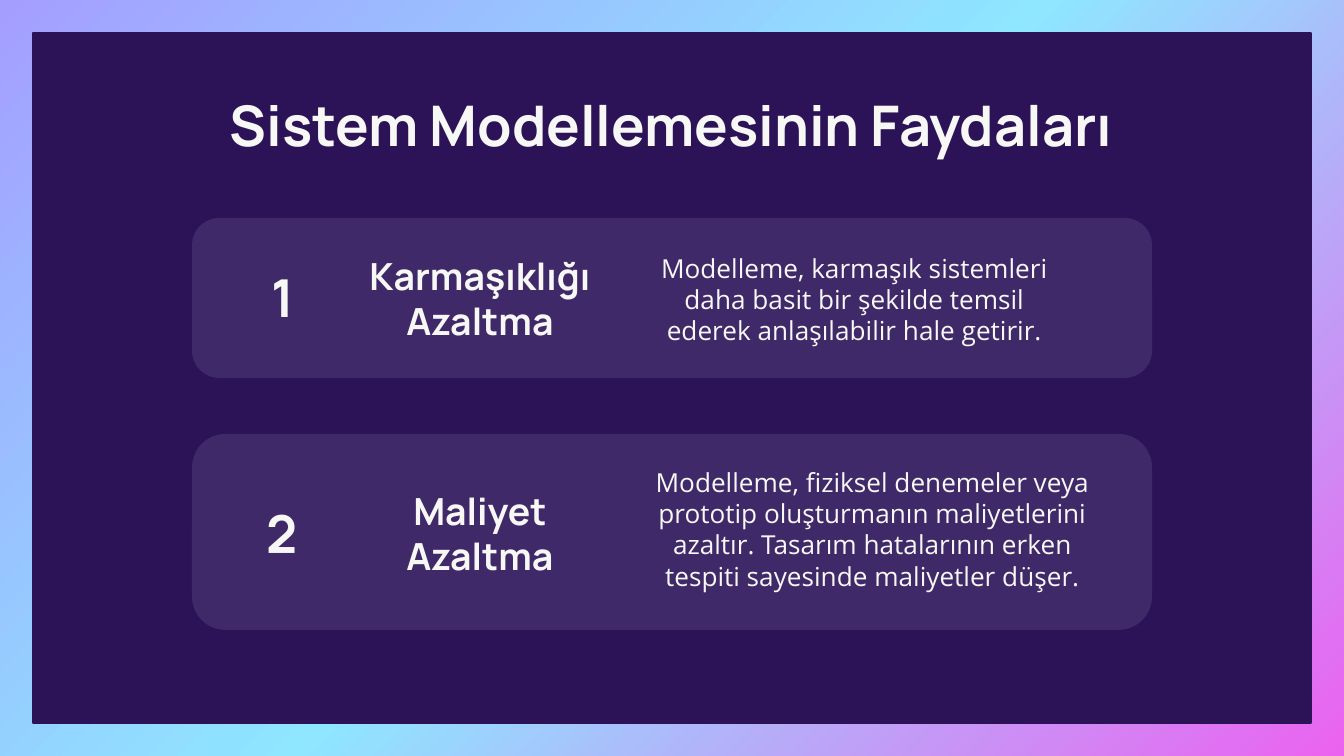
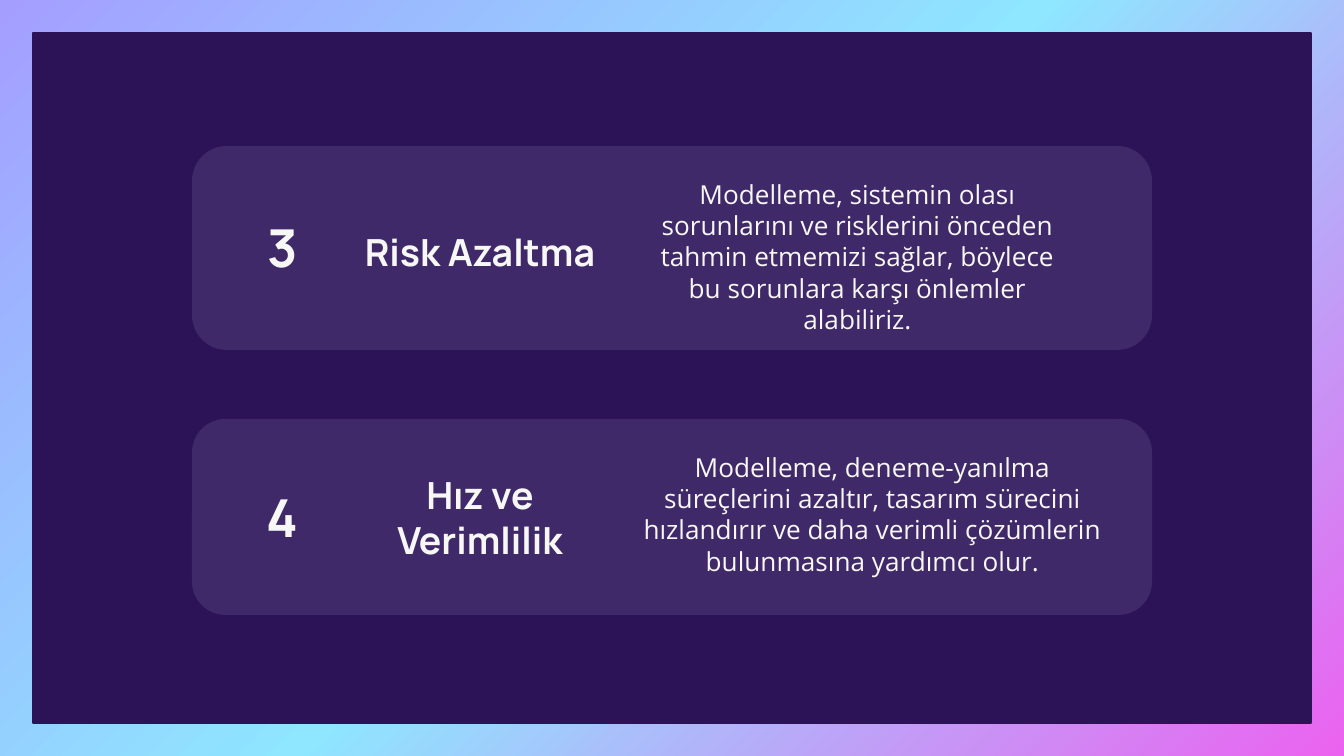
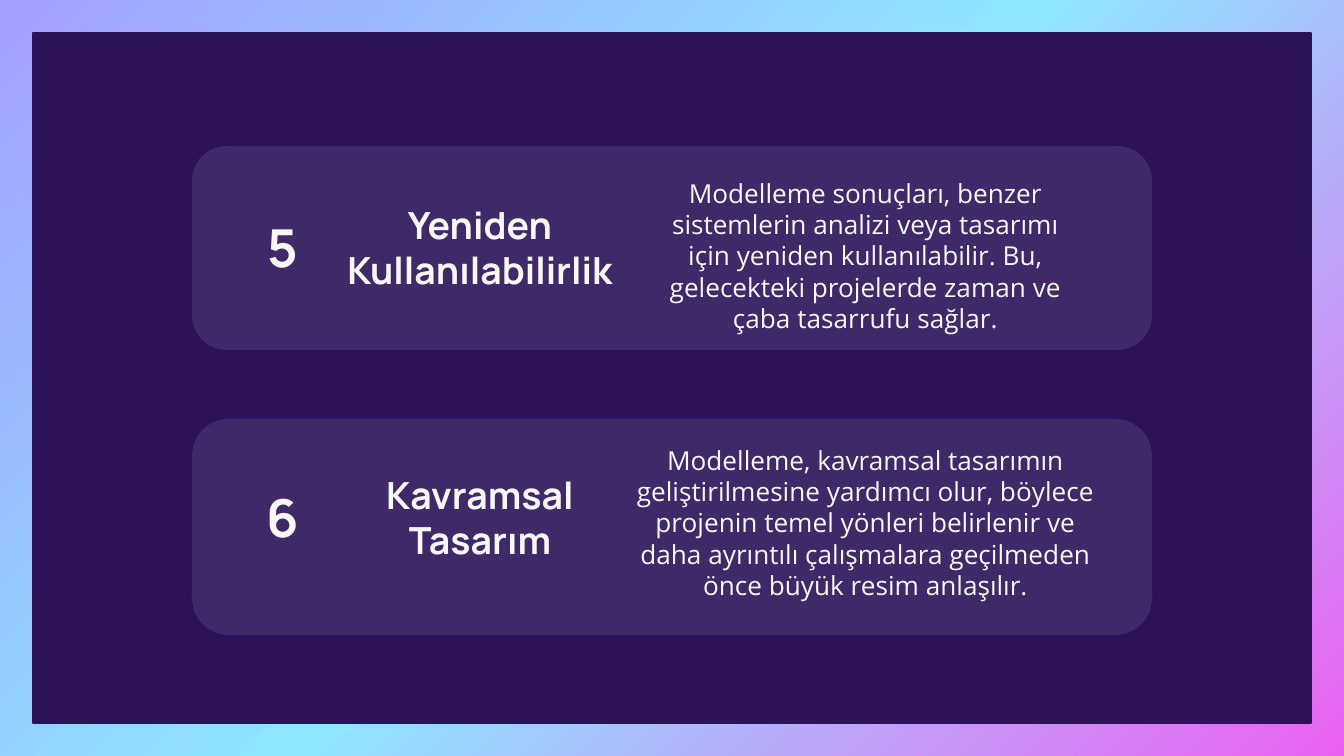
from copy import deepcopy

from pptx import Presentation
from pptx.dml.color import RGBColor
from pptx.enum.shapes import MSO_SHAPE
from pptx.enum.text import MSO_ANCHOR, PP_ALIGN
from pptx.oxml.ns import qn
from pptx.util import Emu, Pt

RECT, ROUND = MSO_SHAPE.RECTANGLE, MSO_SHAPE.ROUNDED_RECTANGLE
TOP, MIDDLE = MSO_ANCHOR.TOP, MSO_ANCHOR.MIDDLE
CENTER = PP_ALIGN.CENTER

SCALE = 914400 / 134.4
WIDE, HIGH = 1344, 756
PAD = 13
GLOW = ["A49EFF", "8EE6FF", "EB62F0"]
NIGHT, PANEL, PALE = "2C1256", "402968", "F7F7F5"
HEAD, BODY = "Manrope", "Open Sans"

CARD_X, CARD_W = 192, 960
NUM_X, NUM_W, NUM_H = 206, 153, 84
NAME_MID, NAME_H = 480, 87

# Each card: top, height, middle line of the number,
# name (text, width, middle line), note (text, left, top, width, height)
SLIDES = [
    ("Sistem Modellemesinin Faydaları", [
        (218, 160, 297, ("Karmaşıklığı Azaltma", 290, 298),
         ("Modelleme, karmaşık sistemleri daha basit bir şekilde temsil "
          "ederek anlaşılabilir hale getirir.", 641, 239, 427, 117)),
        (434, 196, 533, ("Maliyet Azaltma", 227, 533),
         ("Modelleme, fiziksel denemeler veya prototip oluşturmanın "
          "maliyetlerini azaltır. Tasarım hatalarının erken tespiti "
          "sayesinde maliyetler düşer.", 624, 453, 497, 172)),
    ]),
    (None, [
        (146, 204, 247, ("Risk Azaltma", 290, 252),
         ("Modelleme, sistemin olası sorunlarını ve risklerini önceden "
          "tahmin etmemizi sağlar, böylece bu sorunlara karşı önlemler "
          "alabiliriz.", 644, 165, 427, 168)),
        (419, 196, 517, ("Hız ve Verimlilik", 227, 517),
         ("Modelleme, deneme-yanılma süreçlerini azaltır, tasarım sürecini "
          "hızlandırır ve daha verimli çözümlerin bulunmasına yardımcı "
          "olur.", 624, 438, 497, 172)),
    ]),
    (None, [
        (146, 204, 247, ("Yeniden Kullanılabilirlik", 325, 247),
         ("Modelleme sonuçları, benzer sistemlerin analizi veya tasarımı "
          "için yeniden kullanılabilir. Bu, gelecekteki projelerde zaman ve "
          "çaba tasarrufu sağlar.", 652, 164, 427, 168)),
        (419, 216, 517, ("Kavramsal Tasarım", 246, 517),
         ("Modelleme, kavramsal tasarımın geliştirilmesine yardımcı olur, "
          "böylece projenin temel yönleri belirlenir ve daha ayrıntılı "
          "çalışmalara geçilmeden önce büyük resim anlaşılır.",
          617, 431, 497, 172)),
    ]),
]


def px(n):
    return Emu(round(n * SCALE))


def color(code):
    return RGBColor.from_string(code)


def add_glow(master):
    """Set the diagonal three-colour background that all slides inherit."""
    fill = master.background.fill
    fill.gradient()
    fill.gradient_angle = 315
    stops = master.element.find(".//" + qn("a:gsLst"))
    stops.insert(1, deepcopy(stops[0]))
    for i, (stop, code) in enumerate(zip(fill.gradient_stops, GLOW)):
        stop.position = i / (len(GLOW) - 1)
        stop.color.rgb = color(code)


def add_box(slide, kind, x, y, w, h, code):
    box = slide.shapes.add_shape(kind, px(x), px(y), px(w), px(h))
    box.shadow.inherit = False
    box.fill.solid()
    box.fill.fore_color.rgb = color(code)
    return box


def add_text(slide, text, x, y, w, h, size, font=HEAD, anchor=MIDDLE):
    frame = slide.shapes.add_textbox(px(x), px(y), px(w), px(h)).text_frame
    frame.word_wrap = True
    frame.vertical_anchor = anchor
    frame.margin_left = frame.margin_right = px(PAD)
    frame.margin_top = frame.margin_bottom = px(PAD)
    para = frame.paragraphs[0]
    para.alignment = CENTER
    run = para.add_run()
    run.text = text
    run.font.name = font
    run.font.size = Pt(size)
    run.font.bold = font == HEAD
    run.font.color.rgb = color(PALE)


def add_frame(slide):
    edge = 33
    box = add_box(slide, RECT, edge, edge, WIDE - 2 * edge, HIGH - 2 * edge,
                  NIGHT)
    box.line.color.rgb = color(NIGHT)
    box.line.width = Pt(0.75)


def add_card(slide, num, top, high, mid, name, note):
    card = add_box(slide, ROUND, CARD_X, top, CARD_W, high, PANEL)
    card.adjustments[0] = 0.17
    card.line.fill.background()
    add_text(slide, str(num), NUM_X, mid - NUM_H / 2, NUM_W, NUM_H, 28)
    text, wide, line = name
    add_text(slide, text, NAME_MID - wide / 2, line - NAME_H / 2,
             wide, NAME_H, 20)
    add_text(slide, *note, 14, BODY, TOP)


def main():
    prs = Presentation()
    prs.slide_width, prs.slide_height = px(WIDE), px(HIGH)
    add_glow(prs.slide_master)
    num = 0
    for title, cards in SLIDES:
        slide = prs.slides.add_slide(prs.slide_layouts[6])
        add_frame(slide)
        if title:
            add_text(slide, title, 105, 78, 1133, 83, 30, anchor=TOP)
        for card in cards:
            num += 1
            add_card(slide, num, *card)
    prs.save("out.pptx")


if __name__ == "__main__":
    main()
